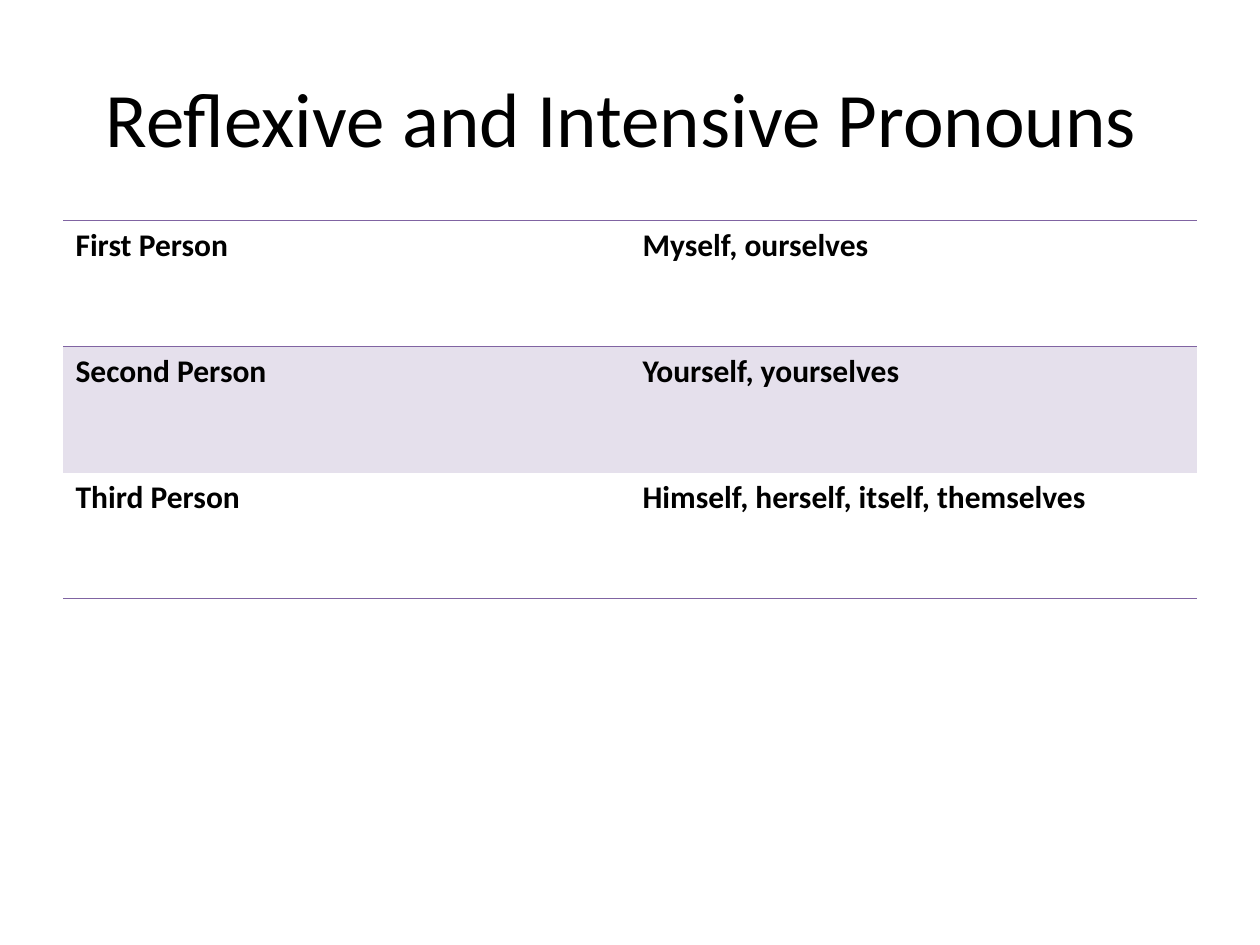
from pptx import Presentation
from pptx.dml.color import RGBColor
from pptx.enum.text import MSO_ANCHOR, PP_ALIGN
from pptx.oxml.ns import qn
from pptx.util import Inches, Pt
from lxml import etree

CENTER = PP_ALIGN.CENTER
MIDDLE = MSO_ANCHOR.MIDDLE

TITLE = "Reflexive and Intensive Pronouns "
PRONOUNS = [
    ("First Person", "Myself, ourselves"),
    ("Second Person", "Yourself, yourselves"),
    ("Third Person", "Himself, herself, itself, themselves"),
]
COLORS = {"text": "000000", "rule": "8064A2", "band": "E5E0EC"}
FONT = "Calibri"
LEFT, WIDTH = 0.5, 9
TITLE_TOP, TITLE_HEIGHT = 0.3, 1.25
TABLE_TOP, ROW_HEIGHT = 1.75, 1


def style_text(paragraph, size, bold=False):
    for run in paragraph.runs:
        run.font.name = FONT
        run.font.size = Pt(size)
        run.font.bold = bold
        run.font.color.rgb = RGBColor.from_string(COLORS["text"])


def set_borders(cell, ruled_sides):
    """Draw a rule on the given sides (T, B) and clear the other sides."""
    properties = cell._tc.get_or_add_tcPr()
    for side in "LRTB":
        line = etree.SubElement(properties, qn(f"a:ln{side}"), w=str(Pt(1)))
        if side in ruled_sides:
            fill = etree.SubElement(line, qn("a:solidFill"))
            etree.SubElement(fill, qn("a:srgbClr"), val=COLORS["rule"])
        else:
            etree.SubElement(line, qn("a:noFill"))


def add_title(slide):
    title = slide.shapes.add_textbox(
        Inches(LEFT), Inches(TITLE_TOP), Inches(WIDTH), Inches(TITLE_HEIGHT))
    frame = title.text_frame
    frame.word_wrap = True
    frame.vertical_anchor = MIDDLE
    frame.text = TITLE
    frame.paragraphs[0].alignment = CENTER
    style_text(frame.paragraphs[0], 44)


def add_pronoun_table(slide):
    row_count = len(PRONOUNS)
    table = slide.shapes.add_table(
        row_count, len(PRONOUNS[0]), Inches(LEFT), Inches(TABLE_TOP),
        Inches(WIDTH), Inches(ROW_HEIGHT * row_count)).table
    table.first_row = False
    table.horz_banding = False
    ruled_sides = {0: "TB", 1: "T", row_count - 1: "B"}
    for row, entries in enumerate(PRONOUNS):
        for column, entry in enumerate(entries):
            cell = table.cell(row, column)
            cell.text_frame.text = entry
            style_text(cell.text_frame.paragraphs[0], 18, bold=True)
            set_borders(cell, ruled_sides.get(row, ""))
            if row % 2:
                cell.fill.solid()
                cell.fill.fore_color.rgb = RGBColor.from_string(COLORS["band"])
            else:
                cell.fill.background()


def main():
    deck = Presentation()
    deck.slide_width, deck.slide_height = Inches(10), Inches(7.5)
    slide = deck.slides.add_slide(deck.slide_layouts[6])
    add_title(slide)
    add_pronoun_table(slide)
    deck.save("out.pptx")


if __name__ == "__main__":
    main()
